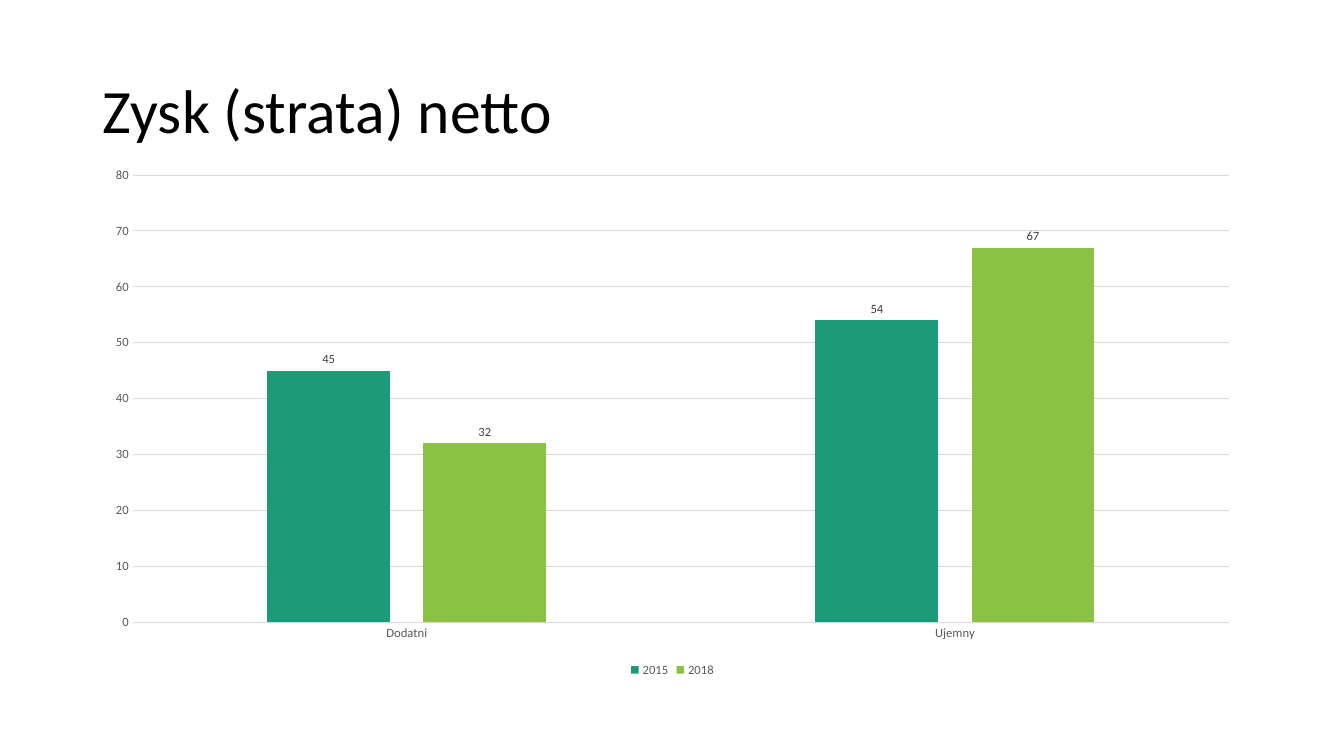
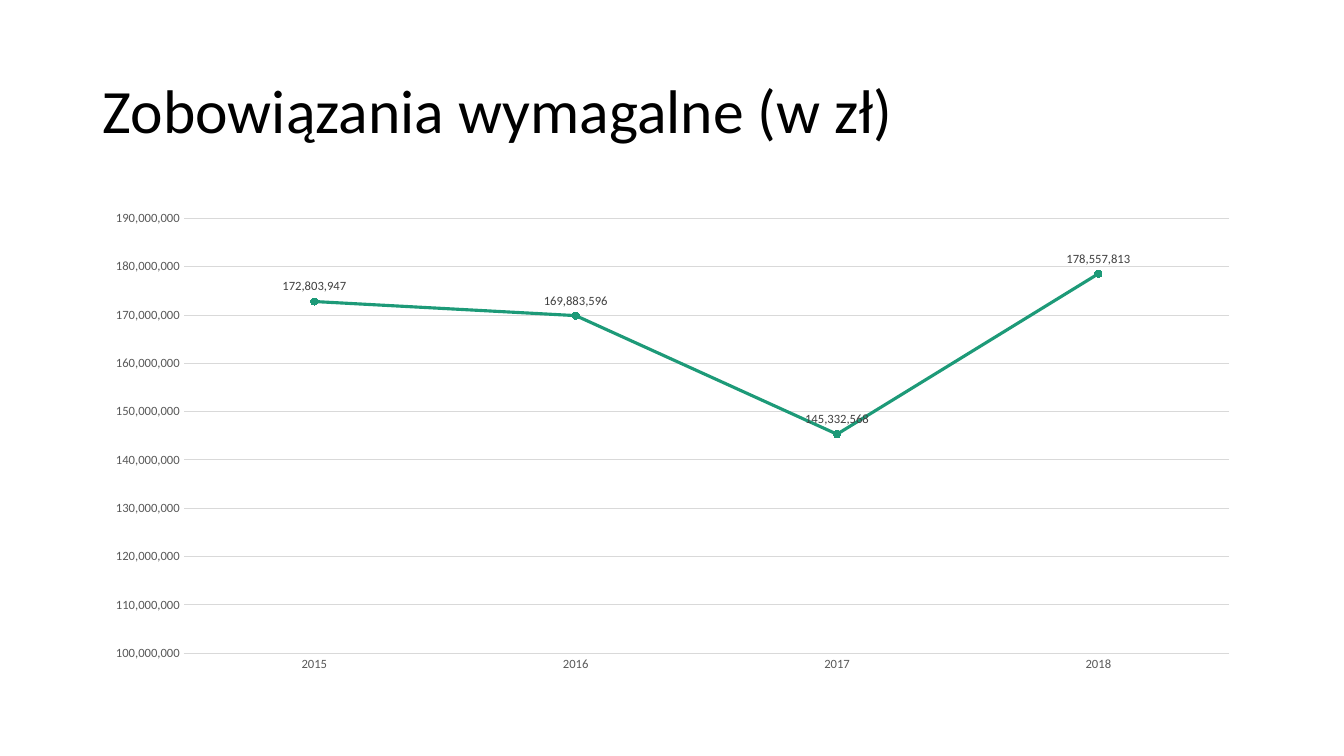
from pptx import Presentation
from pptx.chart.data import CategoryChartData
from pptx.dml.color import RGBColor
from pptx.enum.chart import (
    XL_CHART_TYPE, XL_LABEL_POSITION, XL_LEGEND_POSITION, XL_MARKER_STYLE, XL_TICK_MARK)
from pptx.enum.text import MSO_ANCHOR, MSO_AUTO_SIZE, PP_ALIGN
from pptx.util import Inches, Pt

COLUMNS = XL_CHART_TYPE.COLUMN_CLUSTERED
LINE = XL_CHART_TYPE.LINE_MARKERS
OUTSIDE = XL_LABEL_POSITION.OUTSIDE_END
ABOVE = XL_LABEL_POSITION.ABOVE
BOTTOM = XL_LEGEND_POSITION.BOTTOM
CIRCLE = XL_MARKER_STYLE.CIRCLE
NO_TICK = XL_TICK_MARK.NONE
MIDDLE = MSO_ANCHOR.MIDDLE
NO_FIT = MSO_AUTO_SIZE.NONE
LEFT = PP_ALIGN.LEFT

FONT = "Calibri"
BLACK, AXIS_TEXT, LABEL_TEXT, GRID = "000000", "595959", "404040", "D9D9D9"
SERIES_COLORS = ["1D9A78", "8BC145"]
MARGIN, CONTENT_WIDTH, CHART_BOTTOM = 0.92, 11.5, 6.76


def color(value):
    return RGBColor.from_string(value)


def style_font(font, size, value):
    for name, setting in {"name": FONT, "size": Pt(size)}.items():
        setattr(font, name, setting)
    font.color.rgb = color(value)


slides = [
    {
        "title": "Zysk (strata) netto",
        "kind": COLUMNS,
        "top": 1.56,
        "categories": ["Dodatni", "Ujemny"],
        "series": {"2015": [45, 54], "2018": [32, 67]},
        "number_format": "General",
        "labels": OUTSIDE,
        "scale": {"minimum_scale": 0, "maximum_scale": 80, "major_unit": 10},
    },
    {
        "title": "Zobowiązania wymagalne (w zł)",
        "kind": LINE,
        "top": 2,
        "categories": ["2015", "2016", "2017", "2018"],
        "series": {"Series 1": [172803947, 169883596, 145332568, 178557813]},
        "number_format": "#,##0",
        "labels": ABOVE,
        "scale": {"minimum_scale": 100000000, "maximum_scale": 190000000,
                  "major_unit": 10000000},
    },
]

deck = Presentation()
deck.slide_width, deck.slide_height = Inches(13.33), Inches(7.5)
title_only = deck.slide_layouts[5]

title_style = title_only.placeholders[0]
title_place = {"left": MARGIN, "top": 0.4, "width": CONTENT_WIDTH, "height": 1.45}
for name, length in title_place.items():
    setattr(title_style, name, Inches(length))

for content in slides:
    page = deck.slides.add_slide(title_only)
    frame = page.shapes.title.text_frame
    frame.text = content["title"]
    for name, setting in {"vertical_anchor": MIDDLE, "auto_size": NO_FIT}.items():
        setattr(frame, name, setting)
    para = frame.paragraphs[0]
    for name, setting in {"alignment": LEFT, "line_spacing": 0.9}.items():
        setattr(para, name, setting)
    style_font(para.runs[0].font, 44, BLACK)

    data = CategoryChartData(number_format=content["number_format"])
    data.categories = content["categories"]
    for name, values in content["series"].items():
        data.add_series(name, values)
    chart = page.shapes.add_chart(
        content["kind"], Inches(MARGIN), Inches(content["top"]), Inches(CONTENT_WIDTH),
        Inches(CHART_BOTTOM - content["top"]), data).chart
    style_font(chart.font, 10, BLACK)
    chart.has_title = False

    for axis in (chart.category_axis, chart.value_axis):
        axis.major_tick_mark = axis.minor_tick_mark = NO_TICK
        style_font(axis.tick_labels.font, 9, AXIS_TEXT)
    chart.value_axis.format.line.fill.background()
    chart.value_axis.has_major_gridlines = True
    for line in (chart.category_axis.format.line,
                 chart.value_axis.major_gridlines.format.line):
        line.color.rgb = color(GRID)
        line.width = Pt(0.75)
    for name, setting in content["scale"].items():
        setattr(chart.value_axis, name, setting)
    number_labels = chart.value_axis.tick_labels
    number_labels.number_format = content["number_format"]
    number_labels.number_format_is_linked = False

    plot = chart.plots[0]
    plot.vary_by_categories = False
    chart.has_legend = len(content["series"]) > 1
    if chart.has_legend:
        chart.legend.position = BOTTOM
        chart.legend.include_in_layout = False
        style_font(chart.legend.font, 9, AXIS_TEXT)
    if content["kind"] == COLUMNS:
        plot.gap_width, plot.overlap = 219, -27

    for series, value in zip(plot.series, SERIES_COLORS):
        filled = series.format
        if content["kind"] == LINE:
            series.smooth = False
            series.format.line.color.rgb = color(value)
            series.format.line.width = Pt(2.25)
            series.marker.style, series.marker.size = CIRCLE, 5
            filled = series.marker.format
            filled.line.color.rgb = color(value)
        filled.fill.solid()
        filled.fill.fore_color.rgb = color(value)
        labels = series.data_labels
        for name, setting in {"show_value": True, "position": content["labels"]}.items():
            setattr(labels, name, setting)
        style_font(labels.font, 9, LABEL_TEXT)

deck.save("out.pptx")
